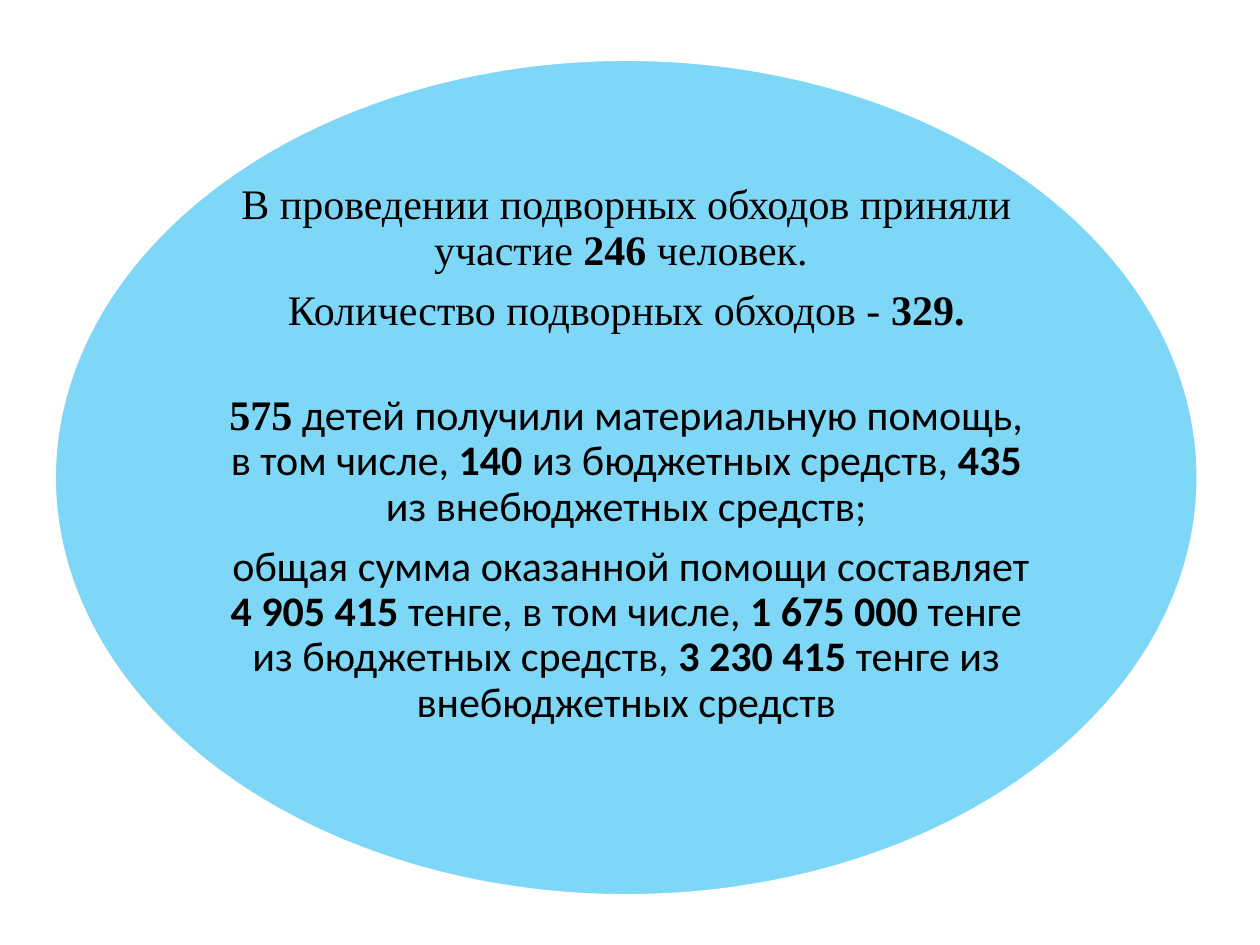
from lxml import etree
from pptx import Presentation
from pptx.dml.color import RGBColor
from pptx.enum import shapes, text
from pptx.oxml import ns
from pptx.util import Inches, Pt


def tint(code):
    return RGBColor.from_string(code)


def write(para, words, font="Calibri", size=24, bold=False, color="000000"):
    run = para.add_run()
    run.text = words
    run.font.name = font
    run.font.size = Pt(size)
    run.font.bold = bold
    run.font.color.rgb = tint(color)


deck = Presentation()
deck.slide_width, deck.slide_height = Inches(10), Inches(7.5)
slide = deck.slides.add_slide(deck.slide_layouts[6])

oval = slide.shapes.add_shape(
    shapes.MSO_SHAPE.OVAL, Inches(0.43), Inches(0.47), Inches(9.08), Inches(6.64))
oval.shadow.inherit = False
oval.fill.solid()
oval.fill.fore_color.rgb = tint("00B0F0")
shade = oval.fill._xPr.find(".//" + ns.qn("a:srgbClr"))
etree.SubElement(shade, ns.qn("a:alpha"), val="50000")
oval.line.color.rgb = tint("FFFFFF")
oval.line.width = Pt(2)

box = slide.shapes.add_textbox(Inches(1.76), Inches(1.44), Inches(6.42), Inches(4.7))
frame = box.text_frame
frame.word_wrap = True
frame.vertical_anchor = text.MSO_ANCHOR.MIDDLE
frame.margin_left = frame.margin_right = frame.margin_top = 0
frame.margin_bottom = Inches(0.36)

serif = {"font": "Times New Roman"}
bold = {"bold": True}
facts = [
    (0, [("В проведении подворных обходов приняли участие ", serif),
         ("246", serif | bold), (" человек. ", serif)]),
    (0, [("Количество подворных обходов - ", serif), ("329.", serif | bold)]),
    (26, [("575", serif | bold),
          (" детей получили материальную помощь, в том числе, ", {}),
          ("140", bold), (" из бюджетных средств, ", {}),
          ("435", bold), (" из внебюджетных средств;", {})]),
    (0, [(" общая сумма оказанной помощи составляет ", {}),
         ("4 905 415", bold), (" тенге, в том числе, ", {}),
         ("1 675 000 ", bold), ("тенге из бюджетных средств, ", {}),
         ("3 230 415 ", bold), ("тенге из внебюджетных средств", {})]),
]

for row, (gap, parts) in enumerate(facts):
    para = frame.add_paragraph() if row else frame.paragraphs[0]
    para.alignment = text.PP_ALIGN.CENTER
    para.line_spacing = 0.9
    para.space_before = Pt(gap)
    para.space_after = Pt(8.4)
    for words, style in parts:
        write(para, words, **style)

deck.save("out.pptx")
